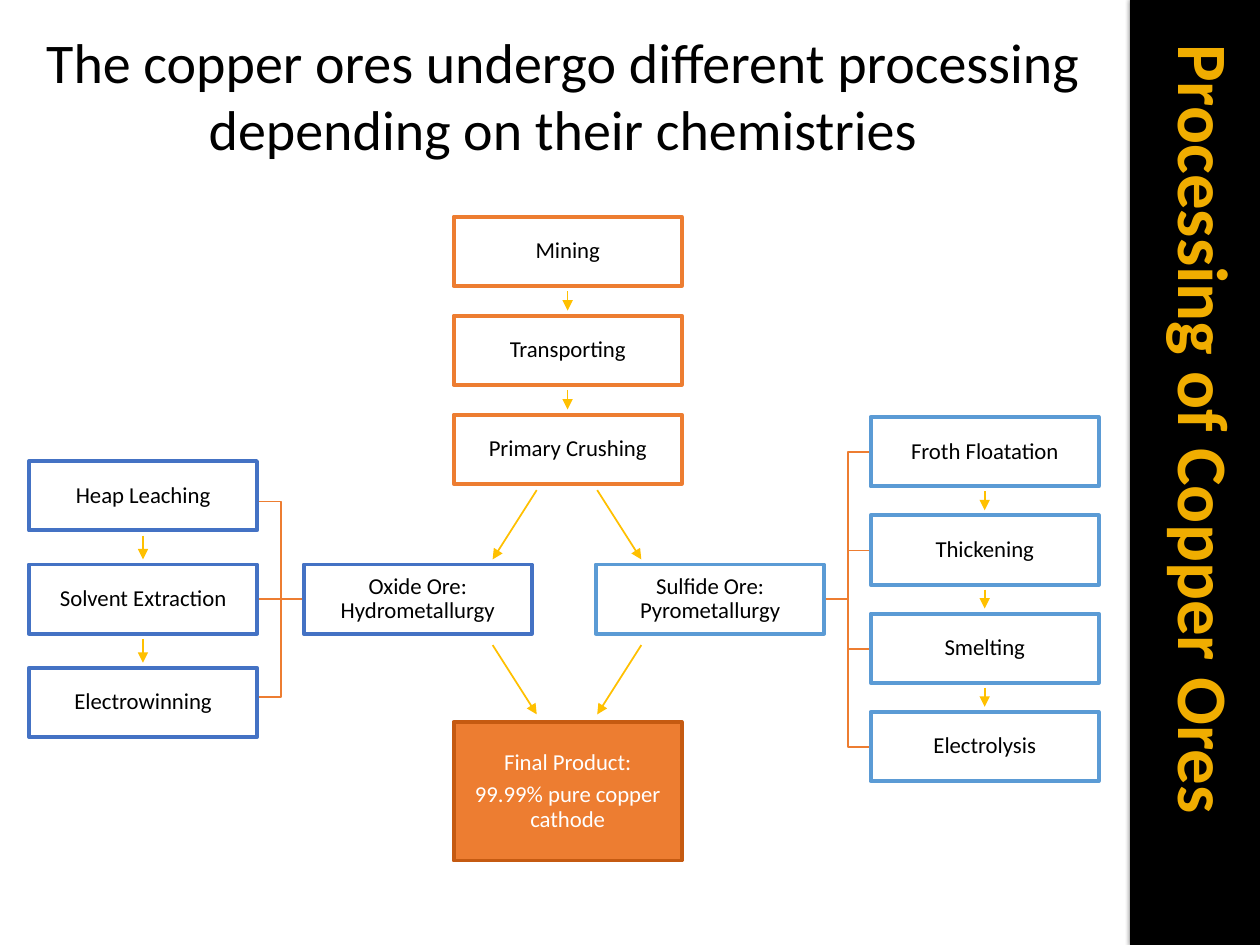
from lxml import etree
from pptx import Presentation
from pptx import util as u
from pptx.dml.color import RGBColor
from pptx.enum import shapes, text
from pptx.oxml.ns import qn

THEME = {
    "font": "Calibri",
    "title": 40.5, "heading": 32, "label": 13,
    "box_line": 2.25, "thin_line": 1,
    "black": "000000", "white": "FFFFFF", "gold": "F0AD00",
    "orange": "ED7D31", "rust": "C55A11", "arrow": "FFC000",
    "blue": "4472C4", "sky": "5B9BD5",
}
W, H = 10, 7.5
BAR_X = 8.97
BOX_W, BOX_H = 1.81, 0.55
ORE_Y = 4.48
ORE_MID = ORE_Y + BOX_H / 2
GAP = 0.04

# Column: left, first top, row pitch, outline, labels
CHAINS = [
    (0.23, 3.66, 0.82, "blue", ["Heap Leaching", "Solvent Extraction", "Electrowinning"]),
    (3.6, 1.72, 0.785, "orange", ["Mining", "Transporting", "Primary Crushing"]),
    (6.91, 3.31, 0.78, "sky", ["Froth Floatation", "Thickening", "Smelting", "Electrolysis"]),
]
# Left, top, height, fill, outline, text colour, paragraphs
boxes = [
    (2.41, ORE_Y, BOX_H, "white", "blue", "black", ["Oxide Ore: Hydrometallurgy"]),
    (4.73, ORE_Y, BOX_H, "white", "sky", "black", ["Sulfide Ore: Pyrometallurgy"]),
    (3.6, 5.73, 2 * BOX_H, "orange", "rust", "white",
     ["Final Product:", "99.99% pure copper cathode"]),
]
arrows = []
for x, top, pitch, outline, labels in CHAINS:
    for row, label in enumerate(labels):
        y = top + row * pitch
        boxes.append((x, y, BOX_H, "white", outline, "black", [label]))
        if row:
            mid = x + BOX_W / 2
            arrows.append((mid, y - pitch + BOX_H + GAP, mid, y - GAP))

# Diagonals mirror each other about the centre line
AXIS = 4.5
for side in (-1, 1):
    near, far = AXIS + side * 0.24, AXIS + side * 0.59
    arrows += [(near, 3.89, far, 4.44), (far, 5.12, near, 5.67)]


def add_text(p, content, size, color, bold=False):
    r = p.add_run()
    r.text = content
    r.font.name = THEME["font"]
    r.font.size = u.Pt(size)
    r.font.bold = bold
    r.font.color.rgb = RGBColor.from_string(THEME[color])


def add_line(kind, ends, color):
    """Add a thin connector without a shadow; ends is x1, y1, x2, y2 in inches."""
    line = s.shapes.add_connector(kind, *[u.Inches(v) for v in ends])
    line.line.color.rgb = RGBColor.from_string(THEME[color])
    line.line.width = u.Pt(THEME["thin_line"])
    etree.SubElement(line._element.spPr, qn("a:effectLst"))
    return line


prs = Presentation()
prs.slide_width, prs.slide_height = u.Inches(W), u.Inches(H)
s = prs.slides.add_slide(prs.slide_layouts[5])

# Black side bar with a soft shadow to its left, behind the title
bar = s.shapes.add_shape(shapes.MSO_SHAPE.RECTANGLE, u.Inches(BAR_X), 0,
                         u.Inches(W - BAR_X), u.Inches(H))
bar.fill.solid()
bar.fill.fore_color.rgb = RGBColor.from_string(THEME["black"])
bar.line.fill.background()
bar.shadow.inherit = False
effects = bar._element.spPr.find(qn("a:effectLst"))
shadow = etree.SubElement(effects, qn("a:outerShdw"), blurRad=str(u.Pt(2.5)),
                          dist=str(u.Pt(0.8)), dir="10800000", rotWithShape="0")
tint = etree.SubElement(shadow, qn("a:srgbClr"), val=THEME["black"])
etree.SubElement(tint, qn("a:alpha"), val="60000")
s.shapes._spTree.insert(2, bar._element)

title = s.shapes.title
title.left, title.top = u.Inches(9.21), u.Inches(0.3)
title.width, title.height = u.Inches(0.68), u.Inches(6.98)
tf = title.text_frame
tf.auto_size = text.MSO_AUTO_SIZE.NONE
tf.vertical_anchor = text.MSO_ANCHOR.MIDDLE
tf.margin_left = u.Inches(0.1)
tf.margin_top = tf.margin_right = tf.margin_bottom = u.Inches(0.05)
tf._txBody.bodyPr.set("vert", "eaVert")
tf.paragraphs[0].alignment = text.PP_ALIGN.LEFT
add_text(tf.paragraphs[0], "Processing of Copper Ores", THEME["title"], "gold", bold=True)

heading = s.shapes.add_textbox(0, u.Inches(0.17), u.Inches(8.94), u.Inches(1.18))
tf = heading.text_frame
tf.word_wrap = True
tf.auto_size = text.MSO_AUTO_SIZE.SHAPE_TO_FIT_TEXT
tf.paragraphs[0].alignment = text.PP_ALIGN.CENTER
add_text(tf.paragraphs[0],
         "The copper ores undergo different processing depending on their chemistries",
         THEME["heading"], "black")

# Brackets from each ore type to its processing steps
BRACKETS = [
    (2.41, 2.05, [3.98, ORE_MID, 5.53]),
    (6.55, 6.91, [3.59 + 0.78 * row for row in range(4)]),
]
for start, end, levels in BRACKETS:
    for y in levels:
        kind = shapes.MSO_CONNECTOR.STRAIGHT if y == ORE_MID else shapes.MSO_CONNECTOR.ELBOW
        add_line(kind, (start, ORE_MID, end, y), "orange")

for x, y, height, fill, outline, color, paragraphs in boxes:
    sp = s.shapes.add_shape(shapes.MSO_SHAPE.RECTANGLE, u.Inches(x), u.Inches(y),
                            u.Inches(BOX_W), u.Inches(height))
    sp.shadow.inherit = False
    sp.fill.solid()
    sp.fill.fore_color.rgb = RGBColor.from_string(THEME[fill])
    sp.line.color.rgb = RGBColor.from_string(THEME[outline])
    sp.line.width = u.Pt(THEME["box_line"])
    tf = sp.text_frame
    tf.word_wrap = True
    tf.vertical_anchor = text.MSO_ANCHOR.MIDDLE
    tf.margin_left = tf.margin_top = tf.margin_right = tf.margin_bottom = u.Inches(0.01)
    for i, content in enumerate(paragraphs):
        p = tf.add_paragraph() if i else tf.paragraphs[0]
        p.alignment = text.PP_ALIGN.CENTER
        p.line_spacing = 0.9
        p.space_after = u.Pt(0.35 * THEME["label"])
        add_text(p, content, THEME["label"], color)

for ends in arrows:
    arrow = add_line(shapes.MSO_CONNECTOR.STRAIGHT, ends, "arrow")
    etree.SubElement(arrow.line._get_or_add_ln(), qn("a:tailEnd"), type="triangle")

prs.save("out.pptx")
